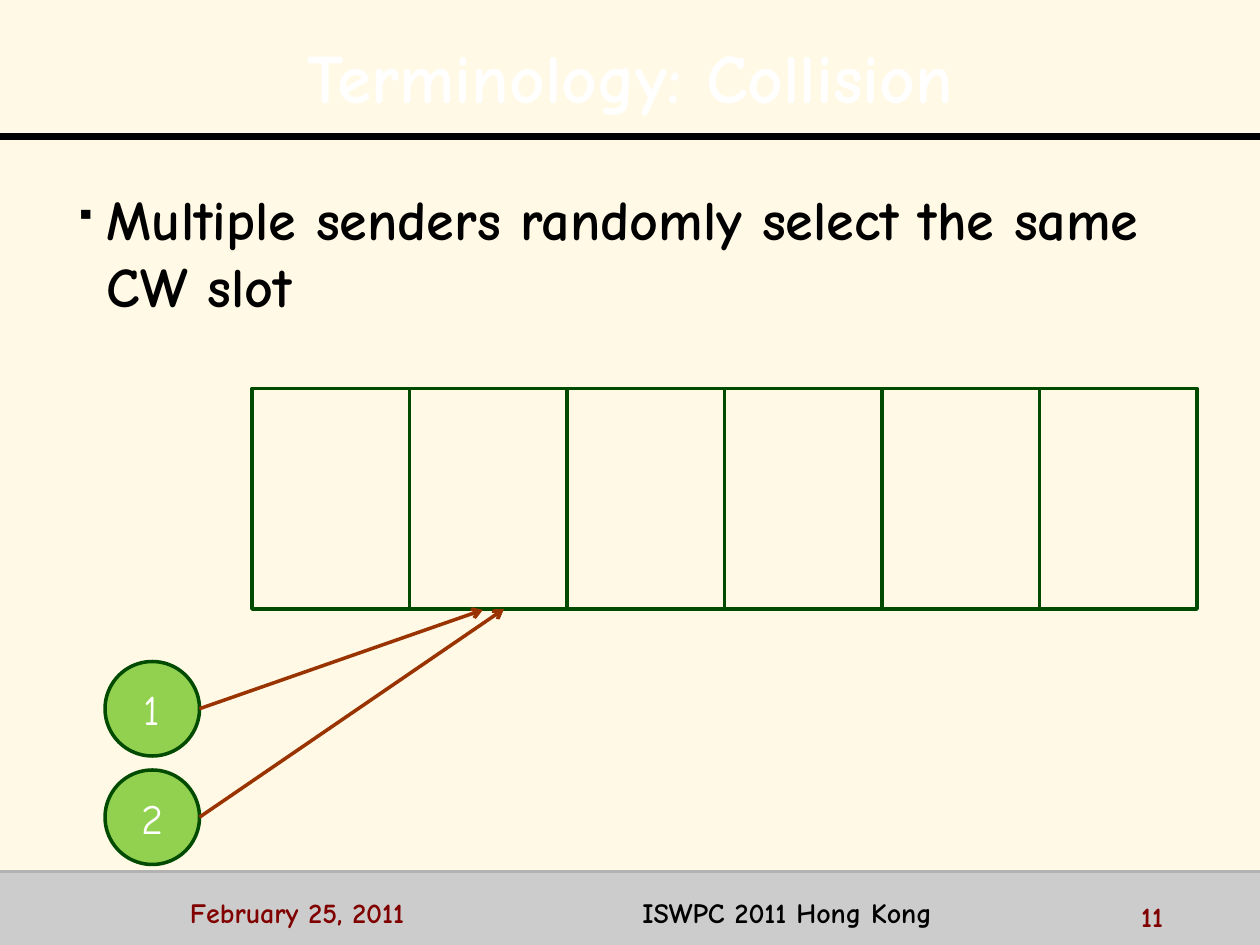
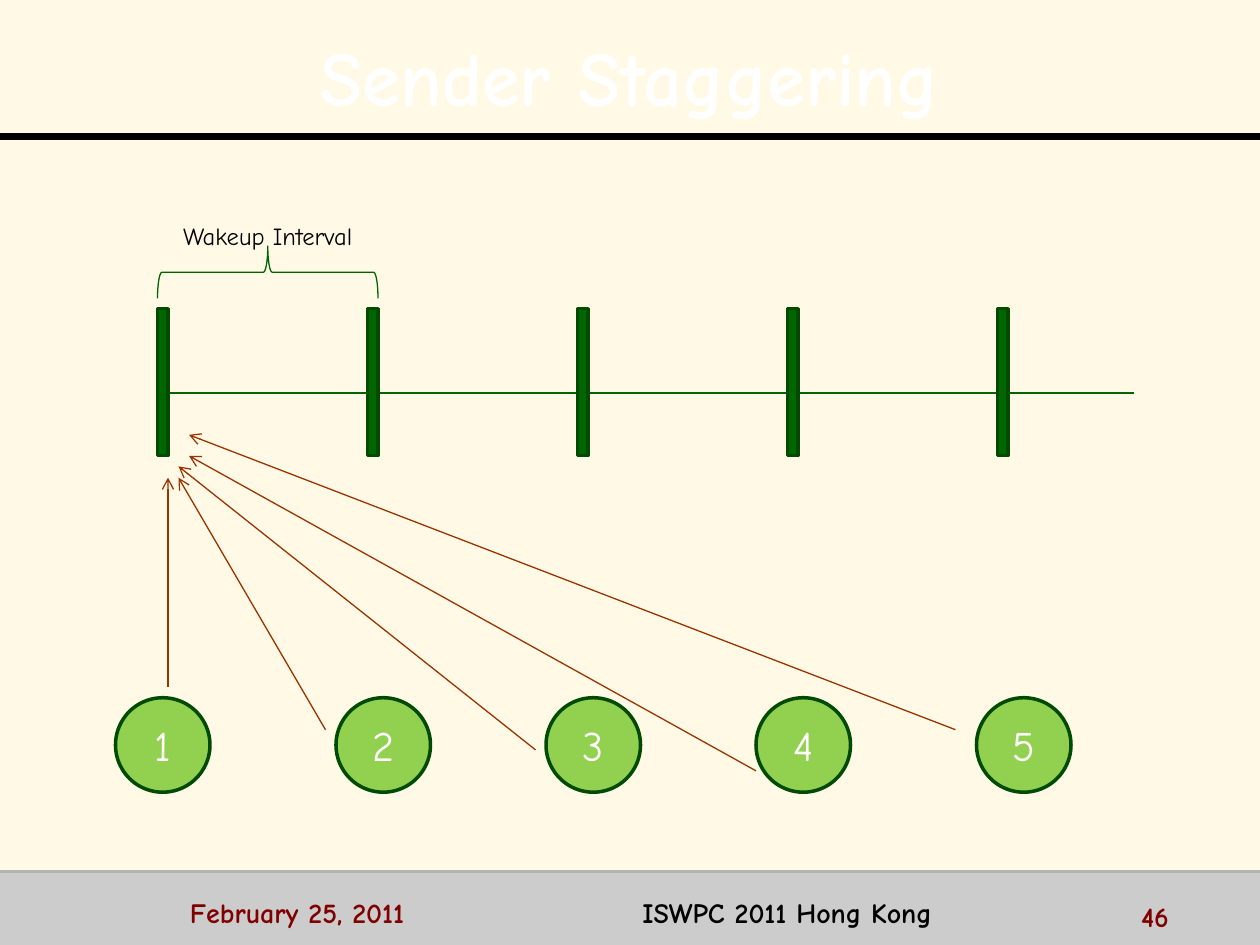
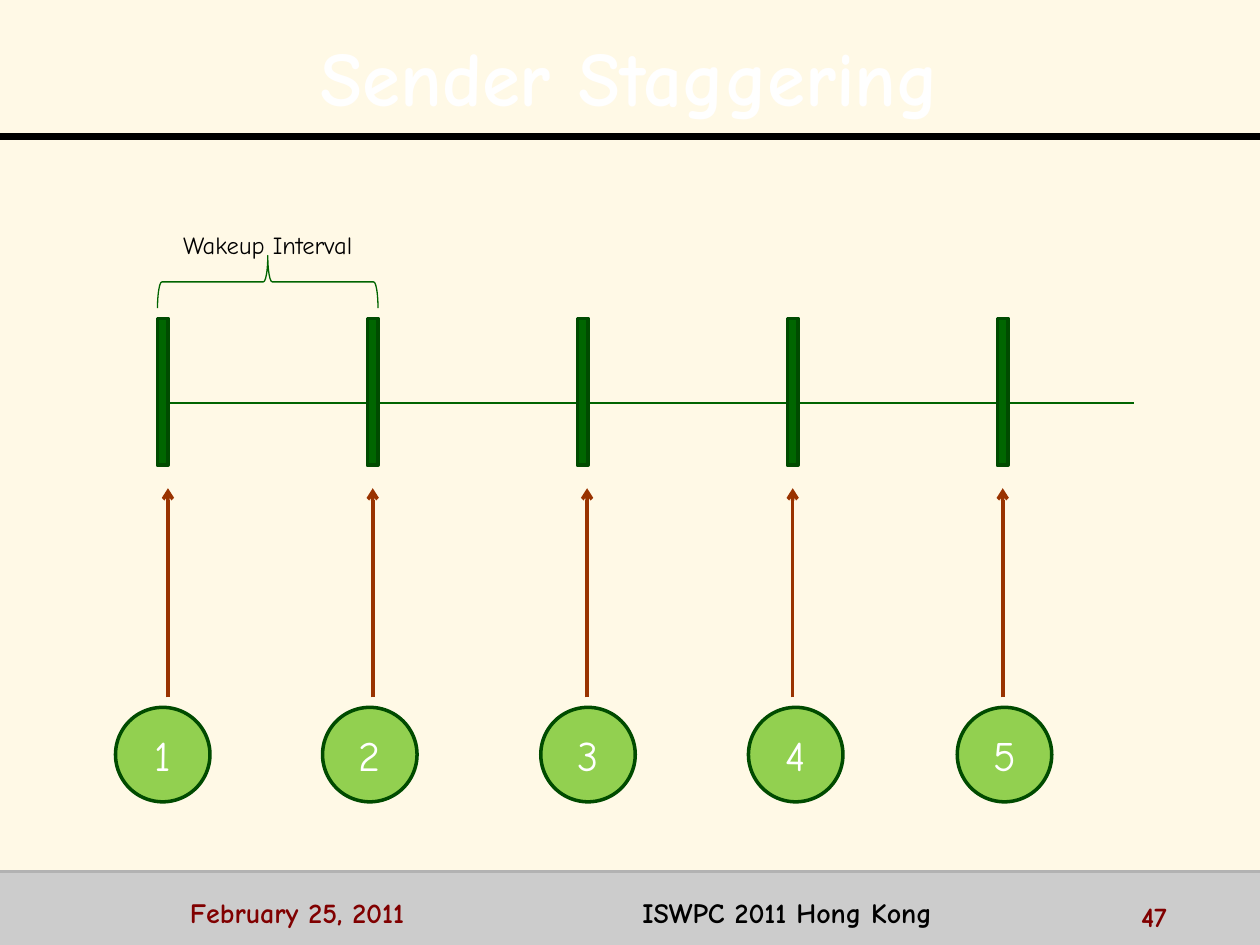
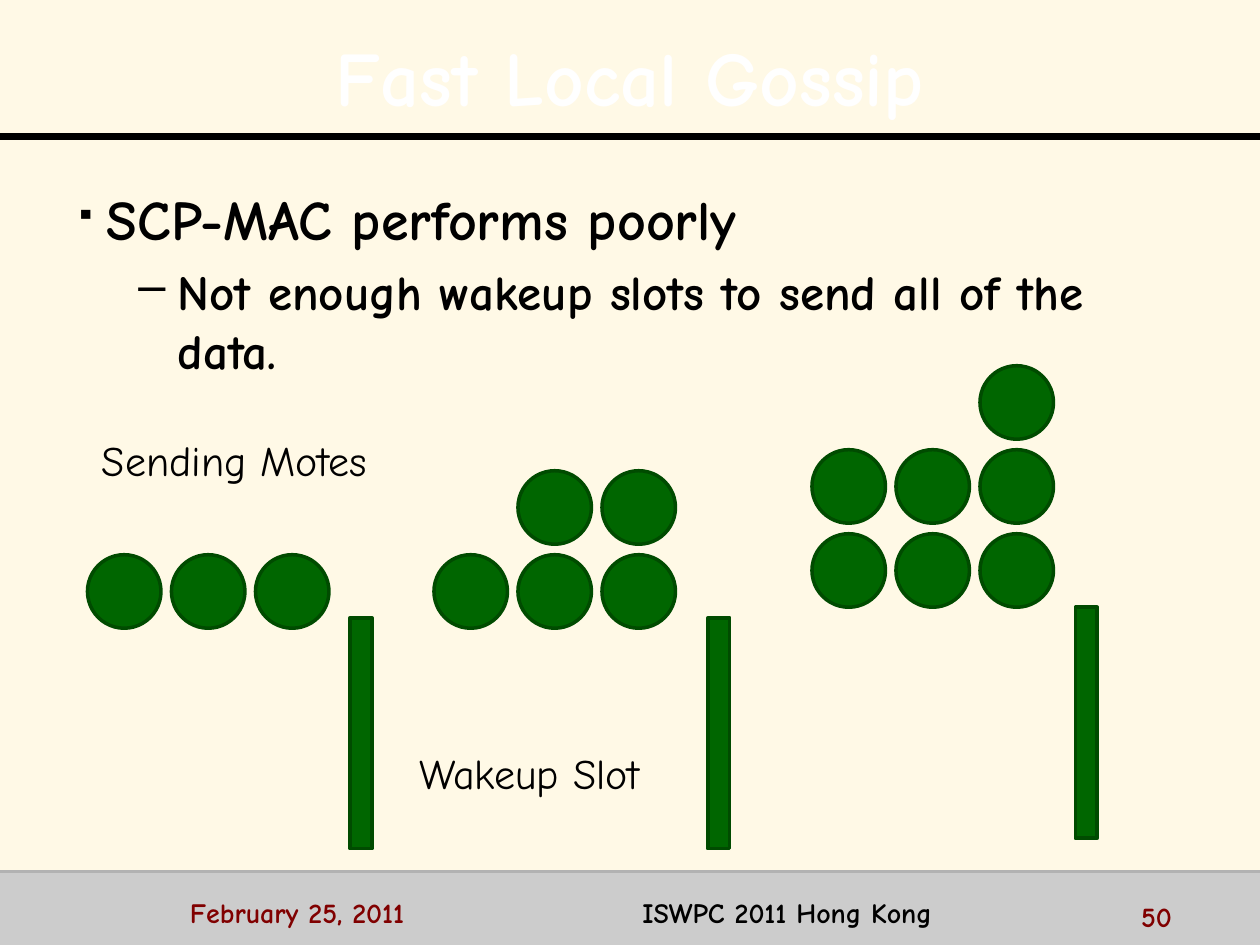
from lxml.etree import SubElement
from pptx import Presentation
from pptx.dml.color import RGBColor
from pptx.enum.shapes import MSO_CONNECTOR, MSO_SHAPE
from pptx.enum.text import MSO_ANCHOR, PP_ALIGN
from pptx.oxml import parse_xml
from pptx.oxml.ns import nsdecls, qn
from pptx.util import Pt

CREAM = RGBColor(0xFF, 0xF9, 0xE6)
WHITE = RGBColor(0xFF, 0xFF, 0xFF)
BLACK = RGBColor(0x00, 0x00, 0x00)
BAND_GREY = RGBColor(0xCC, 0xCC, 0xCC)
RULE_GREY = RGBColor(0xB2, 0xB2, 0xB2)
MAROON = RGBColor(0x80, 0x00, 0x00)
RUST = RGBColor(0x99, 0x33, 0x00)
LIME = RGBColor(0x92, 0xD0, 0x50)
GREEN = RGBColor(0x00, 0x66, 0x00)
AXIS_GREEN = RGBColor(0x00, 0x64, 0x00)
DARK_GREEN = RGBColor(0x00, 0x4B, 0x00)

FONT = "Comic Neue"
BODY = (36, 102, 648, 378)
BULLET_LEVELS = [  # text size, left margin, first-line indent, bullet, bullet size in %
    (32, 18, -18, "▪", 50),
    (28, 58.5, -22.5, "–", 100),
]


def add_block(slide, box, text="", preset=None, fill=None, line=None, weight=2, size=24,
              color=BLACK, bold=False, align=PP_ALIGN.LEFT, anchor=MSO_ANCHOR.TOP,
              bullets=False):
    """Add a preset shape, or a text box if there is no preset, with one paragraph per line."""
    left, top, width, height = map(Pt, box)
    if preset is None:
        block = slide.shapes.add_textbox(left, top, width, height)
    else:
        block = slide.shapes.add_shape(preset, left, top, width, height)
        block.shadow.inherit = False
        if fill is None:
            block.fill.background()
        else:
            block.fill.solid()
            block.fill.fore_color.rgb = fill
        if line is None:
            block.line.fill.background()
        else:
            block.line.color.rgb = line
            block.line.width = Pt(weight)
    if not text:
        return block

    frame = block.text_frame
    frame.word_wrap = True
    frame.vertical_anchor = anchor
    for level, words in enumerate(text.split("\n")):
        paragraph = frame.add_paragraph() if level else frame.paragraphs[0]
        paragraph.alignment = align
        if bullets:
            size, margin, indent, mark, percent = BULLET_LEVELS[level]
            paragraph.level = level
            if level:
                paragraph.space_before = Pt(size * 0.2)
            properties = paragraph._p.get_or_add_pPr()
            properties.set("marL", str(Pt(margin)))
            properties.set("indent", str(Pt(indent)))
            bullet_color = SubElement(properties, qn("a:buClr"))
            SubElement(bullet_color, qn("a:srgbClr"), val=str(BLACK))
            SubElement(properties, qn("a:buSzPct"), val=str(percent * 1000))
            SubElement(properties, qn("a:buChar"), char=mark)
        run = paragraph.add_run()
        run.text = words
        run.font.name = FONT
        run.font.size = Pt(size)
        run.font.bold = bold
        run.font.color.rgb = color
    return block


def add_line(slide, start, end, color, weight, arrow=False):
    connector = slide.shapes.add_connector(MSO_CONNECTOR.STRAIGHT, *map(Pt, start + end))
    connector.line.color.rgb = color
    connector.line.width = Pt(weight)
    SubElement(connector._element.spPr, qn("a:effectLst"))
    if arrow:
        SubElement(connector.line._get_or_add_ln(), qn("a:tailEnd"), type="arrow")


presentation = Presentation()
presentation.slide_width = Pt(720)
presentation.slide_height = Pt(540)

# Shared background, title, rules and footer
slides = []
for title, title_size, number in [
    ("Terminology: Collision", 39.6, 11),
    ("Sender Staggering", 44, 46),
    ("Sender Staggering", 44, 47),
    ("Fast Local Gossip", 44, 50),
]:
    slide = presentation.slides.add_slide(presentation.slide_layouts[6])
    slides.append(slide)
    slide.background.fill.solid()
    slide.background.fill.fore_color.rgb = CREAM
    add_block(slide, (0, 498, 720, 42), preset=MSO_SHAPE.RECTANGLE, fill=BAND_GREY)
    add_line(slide, (0, 78), (720, 78), BLACK, 4)
    add_line(slide, (0, 498), (720, 498), RULE_GREY, 2)

    heading = add_block(slide, (14, 9.4, 692, 62.6), title, size=title_size, color=WHITE,
                        bold=True, align=PP_ALIGN.CENTER, anchor=MSO_ANCHOR.MIDDLE)
    heading_line = heading.text_frame.paragraphs[0]
    heading_line.line_spacing = 1.1
    heading_line.runs[0].font.fill._xPr.find(qn("a:solidFill")).addnext(parse_xml(
        f'<a:effectLst {nsdecls("a")}><a:outerShdw dist="25400" dir="2700000">'
        f'<a:srgbClr val="{BLACK}"/></a:outerShdw></a:effectLst>'))

    footer = add_block(slide, (101.5, 508.3, 524, 22.3), "February 25, 2011", size=16,
                       color=MAROON, bold=True)
    footer_line = footer.text_frame.paragraphs[0]
    tabs = SubElement(footer_line._p.get_or_add_pPr(), qn("a:tabLst"))
    SubElement(tabs, qn("a:tab"), pos=str(Pt(258.5)), algn="l")
    venue = footer_line.add_run()
    venue.text = "\tISWPC 2011 Hong Kong"
    venue.font.name = FONT
    venue.font.size = Pt(16)
    venue.font.bold = True
    venue.font.color.rgb = BLACK
    add_block(slide, (645, 510.5, 72, 18), str(number), size=16, color=MAROON, bold=True)

collision, same_slot, staggered, gossip = slides
sender_style = dict(preset=MSO_SHAPE.OVAL, fill=LIME, line=DARK_GREEN, color=WHITE,
                    align=PP_ALIGN.CENTER, anchor=MSO_ANCHOR.MIDDLE)
wakeup_style = dict(preset=MSO_SHAPE.RECTANGLE, fill=GREEN, line=DARK_GREEN)

# Collision: two senders pick the second slot
add_block(collision, BODY, "Multiple senders randomly select the same CW slot",
          bold=True, bullets=True)
for slot in range(6):
    add_block(collision, (144 + 90 * slot, 222, 90, 126), preset=MSO_SHAPE.RECTANGLE,
              line=DARK_GREEN)
for sender, top, target in [(1, 378, (276, 348.5)), (2, 440, (288, 348))]:
    add_block(collision, (60, top, 54, 54), str(sender), **sender_style)
    add_line(collision, (114, top + 27), target, RUST, 2, arrow=True)

# Sender staggering: all in one wakeup, then one in each
for slide, shift, sender_lefts, arrow_weight, arrows in [
    (same_slot, 0, (66, 192, 312, 432, 558), 0.75, [
        ((96, 392.5), (96, 273)),
        ((186, 417), (102, 273)),
        ((306, 428.5), (102, 266.5)),
        ((432, 440.5), (108, 260.5)),
        ((546, 417), (108, 248.5)),
    ]),
    (staggered, 5.5, (66, 184.3, 309, 427.7, 547), 2,
     [((x, 398.5), (x, 279)) for x in (96, 213, 335.5, 453, 573)]),
]:
    for sender, left in enumerate(sender_lefts, 1):
        add_block(slide, (left, 398.7 + shift, 54, 54), str(sender), **sender_style)
    add_line(slide, (90, 224.7 + shift), (648, 224.7 + shift), AXIS_GREEN, 1.25)
    for wakeup in range(5):
        add_block(slide, (90 + 120 * wakeup, 176.4 + shift, 6, 84), **wakeup_style)
    brace = add_block(slide, (138, 92.6 + shift, 30, 126), preset=MSO_SHAPE.LEFT_BRACE,
                      line=AXIS_GREEN, weight=0.75)
    brace.rotation = 90
    add_block(slide, (96, 122.5 + shift, 114, 24.3), "Wakeup Interval", size=14,
              align=PP_ALIGN.CENTER)
    for start, end in arrows:
        add_line(slide, start, end, RUST, arrow_weight, arrow=True)

# Fast local gossip: the queue grows before every wakeup slot
add_block(gossip, BODY,
          "SCP-MAC performs poorly\nNot enough wakeup slots to send all of the data.",
          bold=True, bullets=True)
for queue_left, queue_top, stacks, wakeup_left, wakeup_top in [
    (50, 317, (1, 1, 1), 200, 353),
    (248, 317, (1, 2, 2), 404.5, 353),
    (464, 305, (2, 2, 3), 614.5, 347),
]:
    add_block(gossip, (wakeup_left, wakeup_top, 12.5, 132), **wakeup_style)
    for column, stack in enumerate(stacks):
        for row in range(stack):
            add_block(gossip, (queue_left + 48 * column, queue_top - 48 * row, 42, 42),
                      preset=MSO_SHAPE.OVAL, fill=GREEN, line=DARK_GREEN)
add_block(gossip, (224.5, 423.5, 156, 36), "Wakeup Slot", align=PP_ALIGN.CENTER)
add_block(gossip, (50, 245, 168, 36), "Sending Motes", align=PP_ALIGN.CENTER)

presentation.save("out.pptx")
